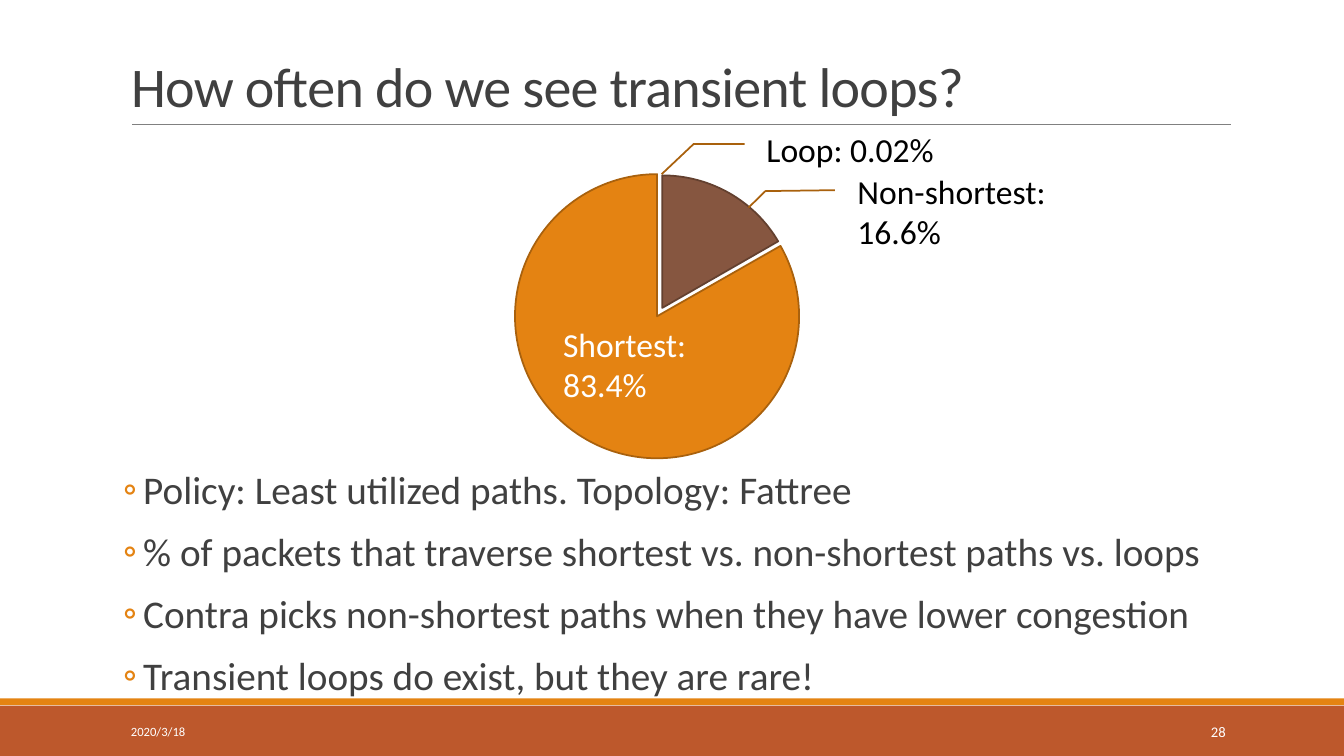
import lxml.etree
import pptx
import pptx.dml.color
import pptx.enum.shapes
import pptx.enum.text
import pptx.oxml.ns
import pptx.util

Cm, Pt, qn = pptx.util.Cm, pptx.util.Pt, pptx.oxml.ns.qn
SHAPE = pptx.enum.shapes.MSO_SHAPE
ALIGN = pptx.enum.text.PP_ALIGN
ANCHOR = pptx.enum.text.MSO_ANCHOR

COLOURS = {
    "text": "404040", "black": "000000", "white": "FFFFFF", "rule": "808080",
    "orange": "E48312", "orange_edge": "A9610D", "rust": "BD582C",
    "brown": "865640", "brown_edge": "63402F",
}


def set_all(target, values):
    for name, value in values.items():
        setattr(target, name, value)


class SlideBuilder:
    """Holds the style and the current slide."""

    font = "Calibri"

    def __init__(self, prs):
        self.s = prs.slides.add_slide(prs.slide_layouts[1])

    def colour(self, name):
        return pptx.dml.color.RGBColor.from_string(COLOURS[name])

    def fill_text(self, sp, lines, size, colour, anchor=ANCHOR.TOP, frame=None, para=None):
        tf = sp.text_frame
        set_all(tf, {"word_wrap": True, "vertical_anchor": anchor,
                     "auto_size": pptx.enum.text.MSO_AUTO_SIZE.NONE, **(frame or {})})
        for i, line in enumerate(lines):
            p = tf.paragraphs[0] if i == 0 else tf.add_paragraph()
            p.text = line
            set_all(p, {"alignment": ALIGN.LEFT, **(para or {})})
            for r in p.runs:
                set_all(r.font, {"name": self.font, "size": Pt(size)})
                r.font.color.rgb = self.colour(colour)
        return tf.paragraphs

    def place(self, sp, box):
        """Move a placeholder to its box and to the front."""
        set_all(sp, dict(zip(("left", "top", "width", "height"), map(Cm, box))))
        sp.element.getparent().append(sp.element)

    def title(self, box, text):
        sp = self.s.shapes.title
        self.place(sp, box)
        paragraphs = self.fill_text(sp, [text], 40, "text", ANCHOR.BOTTOM,
                                    para={"line_spacing": 0.85})
        paragraphs[0].runs[0].font._element.set("spc", "-50")

    def bullets(self, box, lines):
        sp = self.s.placeholders[1]
        self.place(sp, box)
        paragraphs = self.fill_text(
            sp, lines, 28, "text",
            frame={"margin_left": 0, "margin_right": 0},
            para={"line_spacing": 0.9, "space_before": Pt(12), "space_after": Pt(2)})
        for p in paragraphs:
            pPr = p._p.get_or_add_pPr()
            pPr.set("marL", str(Cm(0.56)))
            pPr.set("indent", str(Cm(-0.51)))
            clr = lxml.etree.SubElement(pPr, qn("a:buClr"))
            lxml.etree.SubElement(clr, qn("a:srgbClr"), val=COLOURS["orange"])
            lxml.etree.SubElement(pPr, qn("a:buFont"), typeface=self.font)
            lxml.etree.SubElement(pPr, qn("a:buChar"), char="◦")

    def text(self, box, lines, size, colour, **options):
        sp = self.s.shapes.add_textbox(*map(Cm, box))
        self.fill_text(sp, lines, size, colour, **options)

    def shape(self, kind, box, fill=None, line=None, adjustments=()):
        sp = self.s.shapes.add_shape(kind, *map(Cm, box))
        sp.shadow.inherit = False
        if fill:
            sp.fill.solid()
            sp.fill.fore_color.rgb = self.colour(fill)
        else:
            sp.fill.background()
        if line:
            sp.line.color.rgb = self.colour(line)
            sp.line.width = Pt(1.25)
        else:
            sp.line.fill.background()
        for i, value in enumerate(adjustments):
            sp.adjustments[i] = value
        return sp

    def pie(self, box, fill, line, start, end):
        # Angles in degrees; the preset counts 60000ths, scaled by 100000
        self.shape(SHAPE.PIE, box, fill, line, (start * 0.6, end * 0.6))

    def callout(self, box, lines, adjustments, align):
        sp = self.shape(SHAPE.LINE_CALLOUT_2_NO_BORDER, box, line="orange_edge",
                        adjustments=adjustments)
        self.fill_text(sp, lines, 24, "black", ANCHOR.MIDDLE, para={"alignment": align})

    def rule(self, x1, x2, y):
        line = self.s.shapes.add_connector(
            pptx.enum.shapes.MSO_CONNECTOR.STRAIGHT, Cm(x1), Cm(y), Cm(x2), Cm(y))
        line.line.color.rgb = self.colour("rule")
        line.line.width = Pt(0.5)
        lxml.etree.SubElement(line._element.spPr, qn("a:effectLst"))


def main():
    prs = pptx.Presentation()
    prs.slide_width, prs.slide_height = Cm(33.87), Cm(19.05)
    b = SlideBuilder(prs)

    # Footer bars and title rule
    b.shape(SHAPE.RECTANGLE, (0, 17.78, 33.87, 1.27), "rust")
    b.shape(SHAPE.RECTANGLE, (0, 17.6, 33.87, 0.17), "orange")
    b.rule(3.33, 31.01, 3.13)

    # Title and findings
    b.title((3.05, 0.79, 27.94, 2.34), "How often do we see transient loops?")
    b.bullets((3.05, 11.73, 27.94, 6.22), [
        "Policy: Least utilized paths. Topology: Fattree",
        "% of packets that traverse shortest vs. non-shortest paths vs. loops",
        "Contra picks non-shortest paths when they have lower congestion",
        "Transient loops do exist, but they are rare!",
    ])

    # Date and slide number
    b.text((3.05, 17.93, 6.86, 1.02), ["2020/3/18"], 9, "white", anchor=ANCHOR.MIDDLE)
    b.text((27.51, 17.93, 3.63, 1.02), ["28"], 10.5, "white", anchor=ANCHOR.MIDDLE,
           para={"alignment": ALIGN.RIGHT})

    # Pie of path shares
    b.pie((12.98, 4.39, 7.16, 7.16), "orange", "orange_edge", 330.33, 270)
    b.pie((13.31, 4.42, 6.76, 6.68), "brown", "brown_edge", 270.02, 330.14)

    # Share labels
    b.text((13.94, 8.03, 3.63, 2.31), ["Shortest:\n83.4%"], 24, "white")
    b.callout((19.05, 3.12, 4.75, 1.27), ["Loop: 0.02%"],
              (0.4, -0.06, 0.4, -0.33, 1, -0.5), ALIGN.CENTER)
    b.callout((21.36, 4.17, 5.31, 2.31), ["Non-shortest:", "16.6%"],
              (0.27, -0.06, 0.28, -0.39, 0.46, -0.47), ALIGN.LEFT)

    prs.save("out.pptx")


if __name__ == "__main__":
    main()
